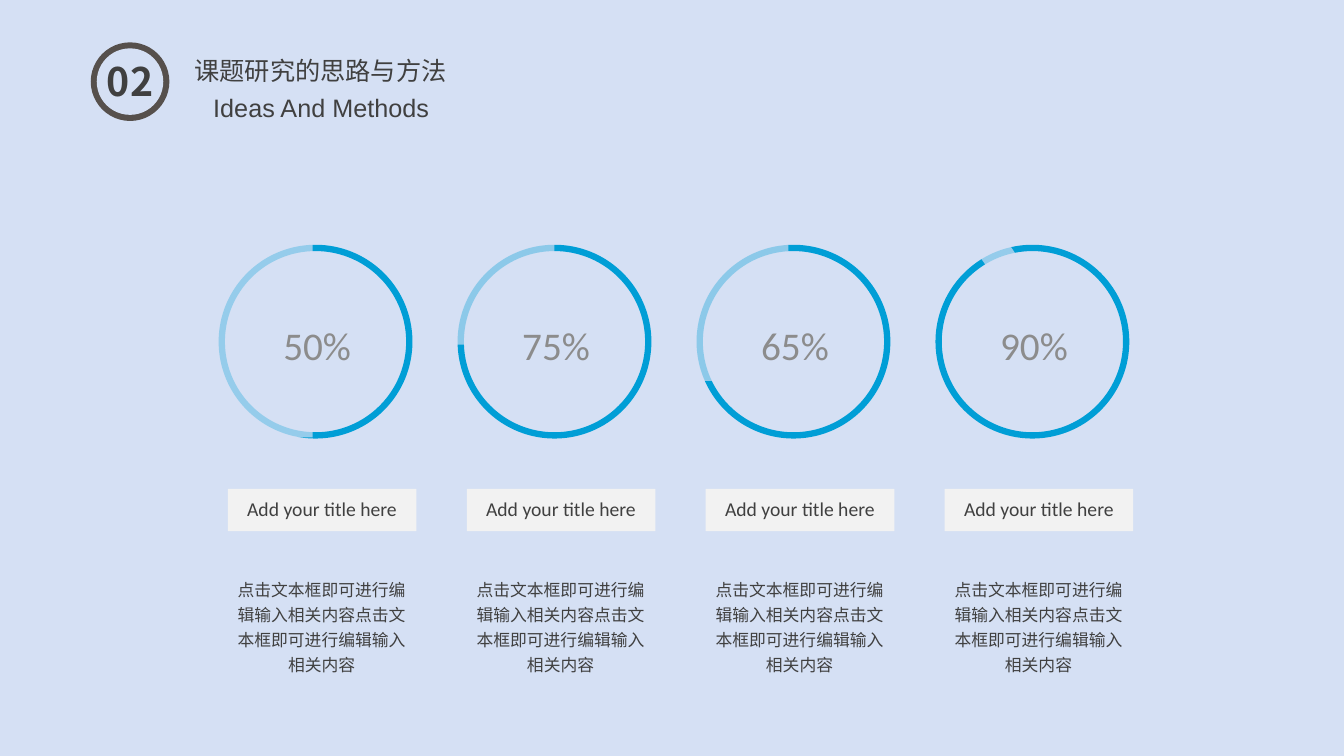
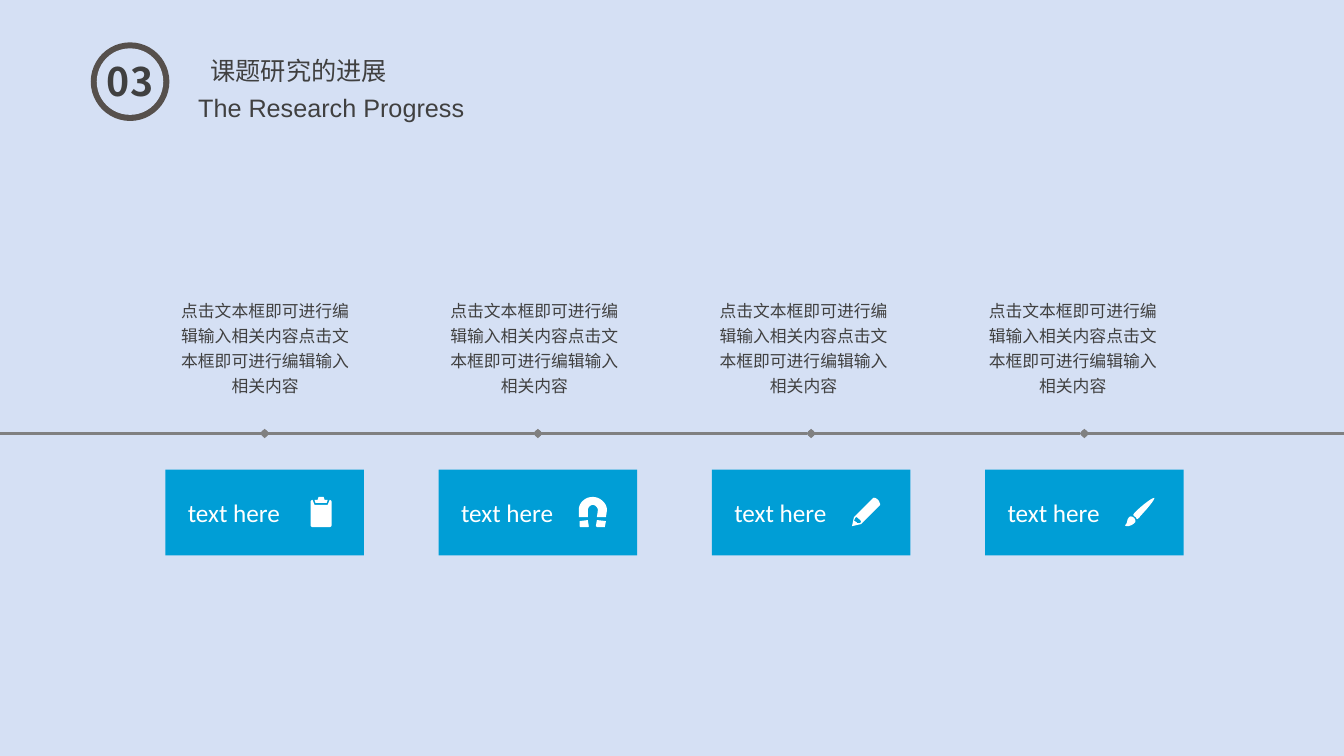
from dataclasses import dataclass

from lxml import etree
from pptx import Presentation
from pptx import util as u
from pptx.dml.color import RGBColor
from pptx.enum import shapes, text
from pptx.oxml import ns

SHAPE = shapes.MSO_SHAPE
CENTER = text.PP_ALIGN.CENTER
BODY = "点击文本框即可进行编辑输入相关内容点击文本框即可进行编辑输入相关内容"

# Icon contours in hundredths of an inch: pairs are corners,
# sextuples are cubic curves.
CLIPBOARD = [
    [(24, 3), (22, 8), (9, 8), (7, 3), (6, 3, 5, 4, 5, 5), (5, 28),
     (5, 29, 6, 30, 7, 30), (24, 30), (25, 30, 26, 29, 26, 28), (26, 5),
     (26, 4, 25, 3, 24, 3)],
    [(21, 6), (22, 3), (19, 3), (18, 0), (13, 0), (12, 3), (9, 3), (10, 6)],
]
MAGNET = [
    [(0, 14), (0, 20), (9, 20), (9, 13), (9, 11, 11, 8, 14, 8),
     (17, 8, 19, 11, 19, 13), (18, 20), (27, 20), (28, 13),
     (28, 6, 21, 0, 14, 0), (6, 0, 0, 6, 0, 13)],
    [(1, 24), (1, 29), (1, 30, 2, 30, 2, 30), (9, 30),
     (10, 30, 10, 29, 10, 29), (9, 23)],
    [(17, 29), (17, 29, 18, 30, 18, 30), (25, 30),
     (26, 30, 26, 30, 26, 29), (27, 24), (18, 23)],
]
PENCIL = [
    [(8, 26), (5, 26), (5, 26, 5, 25, 4, 25), (3, 24, 3, 24, 2, 24), (3, 21),
     (4, 20), (4, 20, 5, 20, 7, 22), (9, 23, 9, 25, 9, 25)],
    [(26, 3), (23, 0, 21, 1, 21, 1), (12, 10), (2, 20), (0, 29), (9, 27),
     (19, 17), (28, 8), (28, 8, 28, 6, 26, 3)],
]
BRUSH = [
    [(29, 1), (27, 0, 15, 10, 11, 14), (9, 16, 8, 17, 8, 18),
     (9, 19, 9, 19, 10, 20), (11, 20, 11, 21, 11, 21),
     (11, 22, 12, 22, 12, 22), (13, 21, 14, 21, 15, 19),
     (19, 15, 30, 2, 29, 1)],
    [(4, 20), (1, 23, 3, 25, 0, 28), (0, 30, 6, 29, 9, 26),
     (11, 25, 10, 22, 9, 21), (7, 19, 5, 19, 4, 20)],
]


@dataclass(frozen=True)
class Theme:
    background: str = "D5E0F4"
    accent: str = "009ED6"
    badge: str = "56504C"
    ink: str = "404040"
    muted: str = "8C8C8C"
    axis: str = "808080"
    label: str = "F2F2F2"
    white: str = "FFFFFF"
    cjk: str = "Noto Sans CJK SC"
    latin: str = "Calibri"
    subtitle: str = "Arial"
    big: int = 28
    heading: int = 18
    caption: int = 14
    body: int = 12


def flatten(contour, steps=8):
    """Turn corners and cubic curves into points, in thousandths of an inch."""
    points = []
    for node in contour:
        if len(node) == 2:
            points.append(node)
            continue
        start, c1, c2, end = points[-1], node[:2], node[2:4], node[4:]
        for k in range(1, steps + 1):
            t = k / steps
            points.append(tuple(
                (1 - t) ** 3 * a + 3 * t * (1 - t) ** 2 * b
                + 3 * t * t * (1 - t) * c + t ** 3 * d
                for a, b, c, d in zip(start, c1, c2, end)))
    return [(x * 10, y * 10) for x, y in points]


class Deck:
    def __init__(self, theme):
        self.theme = theme
        self.prs = Presentation()
        self.prs.slide_width = u.Inches(13.33)
        self.prs.slide_height = u.Inches(7.5)
        self.s = None

    def new_slide(self):
        self.s = self.prs.slides.add_slide(self.prs.slide_layouts[6])
        fill = self.s.background.fill
        fill.solid()
        fill.fore_color.rgb = RGBColor.from_string(self.theme.background)

    def paint(self, sp, fill=None, line=None, width=0, alpha=None):
        """Set fill (alpha in percent) and outline, and drop the shadow."""
        sp.shadow.inherit = False
        if fill:
            sp.fill.solid()
            sp.fill.fore_color.rgb = RGBColor.from_string(fill)
            if alpha:
                color = sp._element.spPr.find(".//" + ns.qn("a:srgbClr"))
                etree.SubElement(color, ns.qn("a:alpha"), val=str(alpha * 1000))
        else:
            sp.fill.background()
        if line:
            sp.line.color.rgb = RGBColor.from_string(line)
            sp.line.width = u.Pt(width)
        else:
            sp.line.fill.background()
        return sp

    def shape(self, kind, box, **style):
        sp = self.s.shapes.add_shape(kind, *map(u.Inches, box))
        return self.paint(sp, **style)

    def put_text(self, sp, words, size, font, color, bold=False, align=CENTER,
                 spacing=None, middle=False, wrap=True):
        tf = sp.text_frame
        tf.word_wrap = wrap
        tf.vertical_anchor = (text.MSO_ANCHOR.MIDDLE if middle
                              else text.MSO_ANCHOR.TOP)
        p = tf.paragraphs[0]
        p.alignment = align
        if spacing:
            p.line_spacing = spacing
        r = p.add_run()
        r.text = words
        r.font.size = u.Pt(size)
        r.font.name = font
        r.font.bold = bold
        r.font.color.rgb = RGBColor.from_string(color)
        etree.SubElement(r.font._element, ns.qn("a:ea"), typeface=font)

    def text(self, box, words, size, font, color, **style):
        sp = self.s.shapes.add_textbox(*map(u.Inches, box))
        self.put_text(sp, words, size, font, color, **style)

    def body(self, left, top):
        t = self.theme
        self.text((left, top, 1.92, 1.11), BODY, t.body, t.cjk, t.ink,
                  spacing=1.25)

    def header(self, number, title, title_box, subtitle, subtitle_left):
        t = self.theme
        self.shape(SHAPE.OVAL, (0.9, 0.42, 0.78, 0.78), fill=t.badge)
        self.shape(SHAPE.OVAL, (0.96, 0.48, 0.66, 0.66), fill=t.background)
        self.text((0.93, 0.52, 0.72, 0.57), number, t.big, t.cjk, t.ink,
                  bold=True)
        self.text(title_box, title, t.heading, t.cjk, t.ink, spacing=2.0,
                  align=text.PP_ALIGN.LEFT, wrap=False)
        self.text((subtitle_left, 0.87, 5.49, 0.4), subtitle, t.heading,
                  t.subtitle, t.ink)

    def icon(self, left, top, contours):
        first, *others = map(flatten, contours)
        builder = self.s.shapes.build_freeform(*first[0],
                                               scale=u.Inches(1) / 1000)
        builder.add_line_segments(first[1:])
        for points in others:
            builder.move_to(*points[0])
            builder.add_line_segments(points[1:])
        sp = builder.convert_to_shape(u.Inches(left), u.Inches(top))
        self.paint(sp, fill=self.theme.white)

    def axis_segment(self, start, end, y, diamond):
        c = self.s.shapes.add_connector(
            shapes.MSO_CONNECTOR.STRAIGHT,
            *map(u.Inches, (start, y, end, y)))
        c.line.color.rgb = RGBColor.from_string(self.theme.axis)
        c.line.width = u.Pt(2.25)
        if diamond:
            etree.SubElement(c._element.spPr.find(ns.qn("a:ln")),
                             ns.qn("a:tailEnd"), type="diamond")
        etree.SubElement(c._element.spPr, ns.qn("a:effectLst"))


def methods_slide(deck):
    t = deck.theme
    deck.new_slide()
    deck.header("02", "课题研究的思路与方法", (1.83, 0.2, 2.73, 0.71),
                "Ideas And Methods", 0.44)
    # Percentage, then the veil over the unfilled part of its ring:
    # offset from the ring, top, width, height, rotation, opacity.
    rings = [
        ("50%", -0.18, 2.38, 1.08, 1.96, 0, 70),
        ("75%", -0.2, 2.38, 1.13, 1.04, 0, 66),
        ("65%", -0.16, 2.38, 1.04, 1.4, 0, 66),
        ("90%", -0.11, 2.05, 0.95, 0.31, 56, 70),
    ]
    for i, (percent, dx, top, width, height, turn, alpha) in enumerate(rings):
        left = 2.2 + 2.37 * i
        deck.shape(SHAPE.OVAL, (left, 2.46, 1.86, 1.86),
                   line=t.accent, width=4.5)
        veil = deck.shape(SHAPE.RECTANGLE, (left + dx, top, width, height),
                          fill=t.background, alpha=alpha)
        veil.rotation = turn
        deck.text((left + 0.27, 2.98, 1.35, 0.88), percent, t.big, t.latin,
                  t.muted, middle=True)
        label = deck.shape(SHAPE.RECTANGLE, (left + 0.06, 4.85, 1.87, 0.42),
                           fill=t.label)
        deck.put_text(label, "Add your title here", t.caption, t.latin, t.ink,
                      spacing=0.9, middle=True)
        deck.body(left + 0.03, 5.65)


def progress_slide(deck):
    t = deck.theme
    deck.new_slide()
    deck.header("03", "课题研究的进展", (1.99, 0.2, 1.97, 0.71),
                "The Research Progress", 0.54)
    card_width, axis_y, dot = 1.97, 4.3, 0.07
    start = 0
    for i, contours in enumerate((CLIPBOARD, MAGNET, PENCIL, BRUSH)):
        left = 1.64 + 2.71 * i
        middle = left + card_width / 2
        deck.shape(SHAPE.RECTANGLE, (left, 4.66, card_width, 0.85),
                   fill=t.accent)
        deck.icon(left + 1.39, 4.93, contours)
        deck.text((left + 0.02, 4.88, 1.32, 0.4), "text here", t.heading,
                  t.latin, t.white)
        deck.body(1.67 + 2.67 * i, 2.88)
        deck.axis_segment(start, middle, axis_y, diamond=True)
        deck.shape(SHAPE.OVAL, (middle - dot / 2, axis_y - dot / 2, dot, dot),
                   fill=t.axis)
        start = middle
    deck.axis_segment(start, 13.33, axis_y, diamond=False)


def main():
    deck = Deck(Theme())
    methods_slide(deck)
    progress_slide(deck)
    deck.prs.save("out.pptx")


if __name__ == "__main__":
    main()
